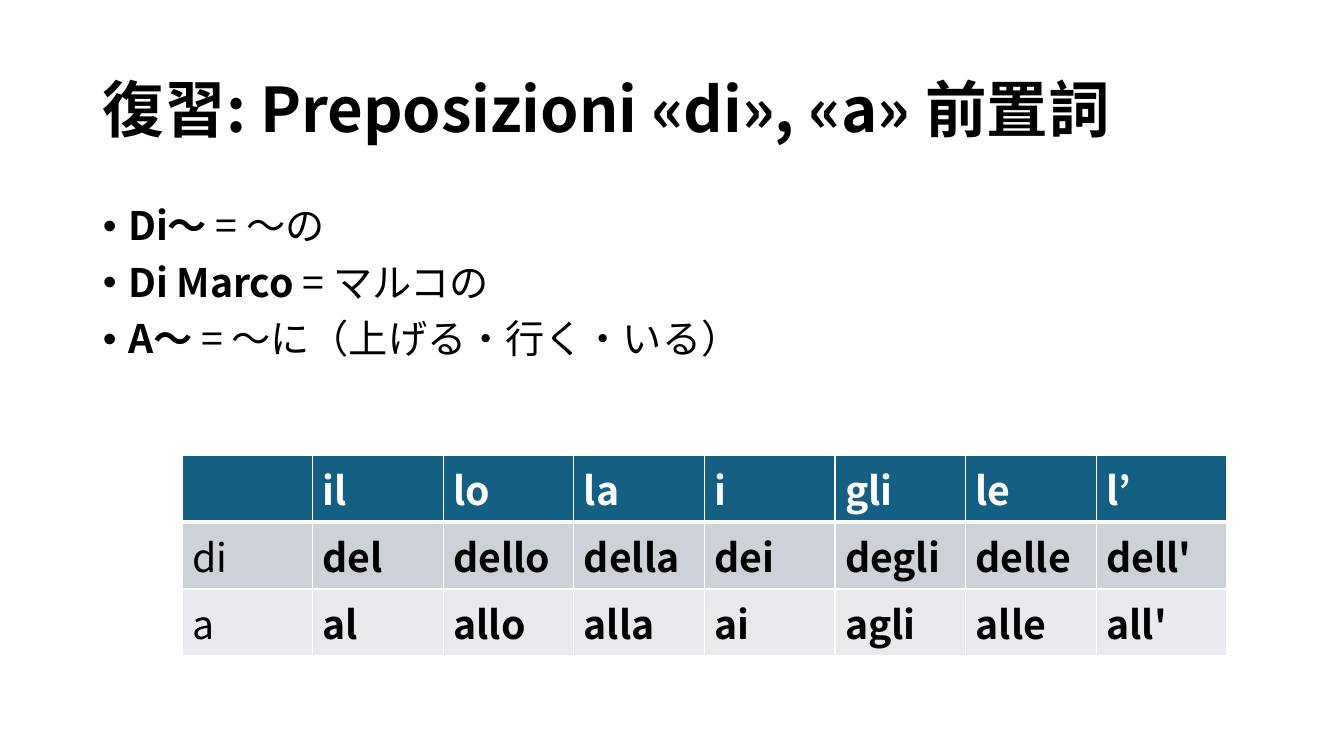
import pptx
import pptx.dml.color
import pptx.enum.text
import pptx.oxml
import pptx.oxml.ns
import pptx.util

PX = 9071.43  # EMU in one px, 100.8 px to the inch
FONT = "Noto Sans CJK JP"


def color(value):
    return pptx.dml.color.RGBColor.from_string(value)


def style(para, size, value, bold=None):
    properties = para.font._element
    para.font.name = FONT
    para.font.size = pptx.util.Pt(size)
    para.font.bold = bold
    para.font.color.rgb = color(value)
    east_asian = pptx.oxml.parse_xml(
        f'<a:ea {pptx.oxml.ns.nsdecls("a")} typeface="{FONT}"/>')
    properties.find(pptx.oxml.ns.qn("a:latin")).addnext(east_asian)


deck = pptx.Presentation()
deck.slide_width = round(1344 * PX)
deck.slide_height = round(756 * PX)
page = deck.slides.add_slide(deck.slide_layouts[6])

# Title
box = page.shapes.add_textbox(*(round(n * PX) for n in (93, 40, 1159, 146)))
box.text_frame.word_wrap = True
box.text_frame.vertical_anchor = pptx.enum.text.MSO_ANCHOR.MIDDLE
para = box.text_frame.paragraphs[0]
para.text = "復習: Preposizioni «di», «a» 前置詞"
para.line_spacing = 0.9
style(para, 44, "000000", True)

# Meanings, each a bold Italian term and its Japanese gloss
meanings = [
    ("Di～ ", "= ～の"),
    ("Di Marco ", "= マルコの"),
    ("A～", " = ～に（上げる・行く・いる）"),
]
box = page.shapes.add_textbox(*(round(n * PX) for n in (93, 202, 1159, 480)))
box.text_frame.word_wrap = True
for index, (term, gloss) in enumerate(meanings):
    para = box.text_frame.paragraphs[0] if index == 0 else box.text_frame.add_paragraph()
    para.line_spacing = 0.9
    if index:
        para.space_before = pptx.util.Pt(10)
    properties = para._p.get_or_add_pPr()
    properties.set("marL", "228600")
    properties.set("indent", "-228600")
    for bullet in ('buFont typeface="Arial"', 'buChar char="•"'):
        properties.append(pptx.oxml.parse_xml(
            f'<a:{bullet} {pptx.oxml.ns.nsdecls("a")}/>'))
    style(para, 28, "000000")
    for text, bold in ((term, True), (gloss, False)):
        span = para.add_run()
        span.text = text
        span.font.bold = bold

# Table of prepositions joined with articles
rows = [
    ["", "il", "lo", "la", "i", "gli", "le", "l’"],
    ["di", "del", "dello", "della", "dei", "degli", "delle", "dell'"],
    ["a", "al", "allo", "alla", "ai", "agli", "alle", "all'"],
]
fills = ["156082", "CCD2D8", "E8EAED"]
table = page.shapes.add_table(
    len(rows), len(rows[0]), *(round(n * PX) for n in (182, 455, 1045, 201))).table
for row_index, (words, fill) in enumerate(zip(rows, fills)):
    for column_index, word in enumerate(words):
        cell = table.cell(row_index, column_index)
        cell.fill.solid()
        cell.fill.fore_color.rgb = color(fill)
        para = cell.text_frame.paragraphs[0]
        para.text = word
        style(para, 28, "000000" if row_index else "FFFFFF",
              row_index == 0 or column_index > 0)

        # White borders, thick between header and body
        thick_side = {0: "B", 1: "T"}.get(row_index)
        for position, side in enumerate("LRTB"):
            width = pptx.util.Pt(3 if side == thick_side else 1)
            cell._tc.get_or_add_tcPr().insert(position, pptx.oxml.parse_xml(
                f'<a:ln{side} {pptx.oxml.ns.nsdecls("a")} w="{width}"><a:solidFill>'
                f'<a:srgbClr val="FFFFFF"/></a:solidFill></a:ln{side}>'))

deck.save("out.pptx")
